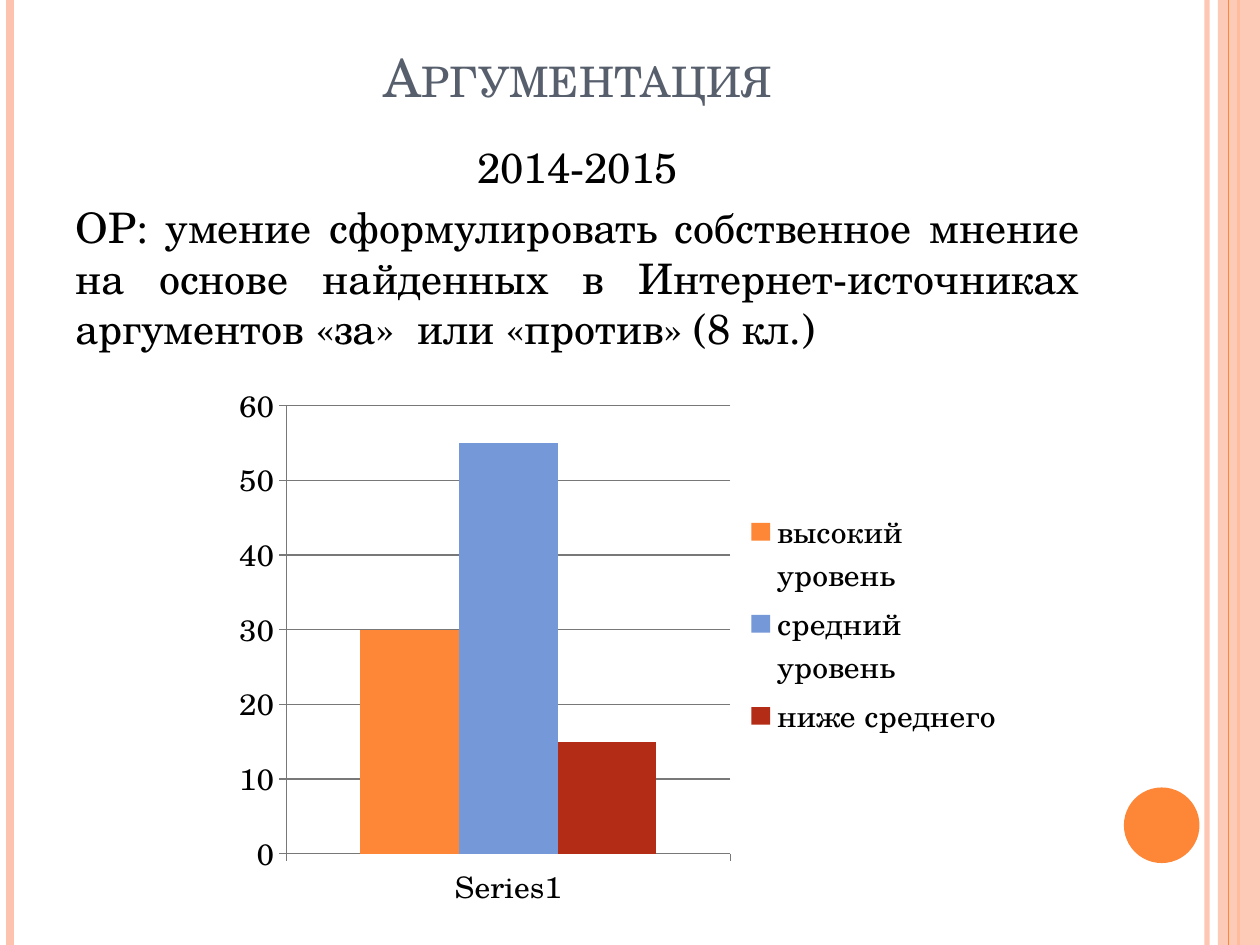
"""Build the argumentation results slide with its column chart."""
from typing import NamedTuple

from lxml import etree
from pptx import Presentation
from pptx.chart.data import CategoryChartData
from pptx.dml.color import RGBColor
from pptx.enum.chart import XL_CHART_TYPE, XL_LEGEND_POSITION, XL_TICK_MARK
from pptx.enum.shapes import MSO_CONNECTOR, MSO_SHAPE
from pptx.enum.text import MSO_ANCHOR, PP_ALIGN
from pptx.oxml.ns import qn
from pptx.util import Pt

COLUMNS = XL_CHART_TYPE.COLUMN_CLUSTERED
LEGEND_RIGHT = XL_LEGEND_POSITION.RIGHT
TICK_OUT, TICK_NONE = XL_TICK_MARK.OUTSIDE, XL_TICK_MARK.NONE
STRAIGHT = MSO_CONNECTOR.STRAIGHT
RECTANGLE, OVAL = MSO_SHAPE.RECTANGLE, MSO_SHAPE.OVAL
BOTTOM = MSO_ANCHOR.BOTTOM
CENTER, JUSTIFY = PP_ALIGN.CENTER, PP_ALIGN.JUSTIFY

FONT = "TeX Gyre Schola"
WIDTH, HEIGHT = 720, 540
PEACH = RGBColor(0xFE, 0xC3, 0xAE)
ORANGE = RGBColor(0xFE, 0x86, 0x37)
BLUE = RGBColor(0x75, 0x98, 0xD9)
RED = RGBColor(0xB3, 0x2C, 0x16)
SLATE = RGBColor(0x57, 0x5F, 0x6D)
GRAY = RGBColor(0x78, 0x78, 0x78)
BLACK = RGBColor(0, 0, 0)


class Stripe(NamedTuple):
    x: float
    weight: float
    color: RGBColor
    opacity: int = 100


class Decoration(NamedTuple):
    kind: MSO_SHAPE
    left: float
    top: float
    width: float
    height: float
    color: RGBColor
    opacity: int = 100


class Level(NamedTuple):
    name: str
    percent: int
    color: RGBColor


DECORATIONS = [
    Stripe(689.76, 3, PEACH, 93),
    Stripe(5.76, 4.5, PEACH),
    Stripe(707.76, 1.5, ORANGE),
    Decoration(RECTANGLE, 696, 0, 24, HEIGHT, PEACH, 87),
    Stripe(702, 0.75, ORANGE),
    Decoration(OVAL, 642.24, 450, 43.2, 43.2, ORANGE),
]
LEVELS = [
    Level("высокий уровень", 30, ORANGE),
    Level("средний уровень", 55, BLUE),
    Level("ниже среднего", 15, RED),
]
PARAGRAPHS = [
    ("2014-2015", CENTER),
    ("ОР: умение сформулировать собственное мнение на основе найденных "
     "в Интернет-источниках аргументов «за»  или «против» (8 кл.)", JUSTIFY),
]
PLOT_AREA = {"x": 0.08, "y": 0.065, "w": 0.559, "h": 0.893}


def set_opacity(element, opacity: int) -> None:
    if opacity < 100:
        color = next(element.iter(qn("a:srgbClr")))
        etree.SubElement(color, qn("a:alpha")).set("val", str(opacity * 1000))


def draw_stripe(page, stripe: Stripe) -> None:
    line = page.shapes.add_connector(STRAIGHT, Pt(stripe.x), 0, Pt(stripe.x), Pt(HEIGHT))
    line.line.color.rgb = stripe.color
    line.line.width = Pt(stripe.weight)
    properties = line._element.spPr
    set_opacity(properties, stripe.opacity)
    etree.SubElement(properties, qn("a:effectLst"))


def draw_decoration(page, item: Decoration) -> None:
    shape = page.shapes.add_shape(
        item.kind, Pt(item.left), Pt(item.top), Pt(item.width), Pt(item.height))
    shape.shadow.inherit = False
    shape.fill.solid()
    shape.fill.fore_color.rgb = item.color
    shape.line.fill.background()
    set_opacity(shape._element.spPr, item.opacity)


def format_font(font, size: float, color: RGBColor) -> None:
    font.name = FONT
    font.size = Pt(size)
    font.color.rgb = color


def write_title(page) -> None:
    title = page.shapes.title
    title.left, title.top, title.width, title.height = Pt(36), Pt(21.6), Pt(588), Pt(43.92)
    title.text_frame.text = "Аргументация"
    title.text_frame.vertical_anchor = BOTTOM
    para = title.text_frame.paragraphs[0]
    para.alignment = CENTER
    span = para.runs[0]
    format_font(span.font, 30, SLATE)
    span.font._element.set("cap", "small")


def write_body(page) -> None:
    box = page.shapes.add_textbox(Pt(36), Pt(77.04), Pt(588), Pt(432.72))
    frame = box.text_frame
    frame.word_wrap = True
    frame.text = "\n".join(text for text, _ in PARAGRAPHS)
    for para, (_, alignment) in zip(frame.paragraphs, PARAGRAPHS):
        para.alignment = alignment
        para.space_before = Pt(6)
        format_font(para.runs[0].font, 24, BLACK)


def fix_plot_area(chart) -> None:
    plot_area = chart._chartSpace.chart.plotArea
    for old in plot_area.findall(qn("c:layout")):
        plot_area.remove(old)
    layout = etree.Element(qn("c:layout"))
    plot_area.insert(0, layout)
    manual = etree.SubElement(layout, qn("c:manualLayout"))
    settings = {"layoutTarget": "inner", "xMode": "edge", "yMode": "edge", **PLOT_AREA}
    for name, value in settings.items():
        etree.SubElement(manual, qn(f"c:{name}")).set("val", str(value))


def draw_chart(page) -> None:
    data = CategoryChartData()
    data.categories = ["Series1"]
    for level in LEVELS:
        data.add_series(level.name, [level.percent])
    frame = page.shapes.add_chart(COLUMNS, Pt(127.44), Pt(213.12), Pt(453.6), Pt(306), data)
    chart = frame.chart
    chart.has_title = False
    format_font(chart.font, 18, BLACK)
    chart.has_legend = True
    chart.legend.position = LEGEND_RIGHT
    chart.legend.include_in_layout = False
    plot = chart.plots[0]
    plot.gap_width = 150
    plot.overlap = 0
    plot.vary_by_categories = False
    for series, level in zip(plot.series, LEVELS):
        series.format.fill.solid()
        series.format.fill.fore_color.rgb = level.color
    for axis in (chart.category_axis, chart.value_axis):
        axis.major_tick_mark = TICK_OUT
        axis.minor_tick_mark = TICK_NONE
        axis.format.line.color.rgb = GRAY
        axis.format.line.width = Pt(0.75)
    scale = chart.value_axis
    scale.minimum_scale, scale.maximum_scale, scale.major_unit = 0, 60, 10
    scale.has_major_gridlines = True
    scale.major_gridlines.format.line.color.rgb = GRAY
    scale.major_gridlines.format.line.width = Pt(0.75)
    fix_plot_area(chart)


def main() -> None:
    deck = Presentation()
    deck.slide_width, deck.slide_height = Pt(WIDTH), Pt(HEIGHT)
    page = deck.slides.add_slide(deck.slide_layouts.get_by_name("Title Only"))
    for item in DECORATIONS:
        if isinstance(item, Stripe):
            draw_stripe(page, item)
        else:
            draw_decoration(page, item)
    write_title(page)
    write_body(page)
    draw_chart(page)
    deck.save("out.pptx")


if __name__ == "__main__":
    main()
